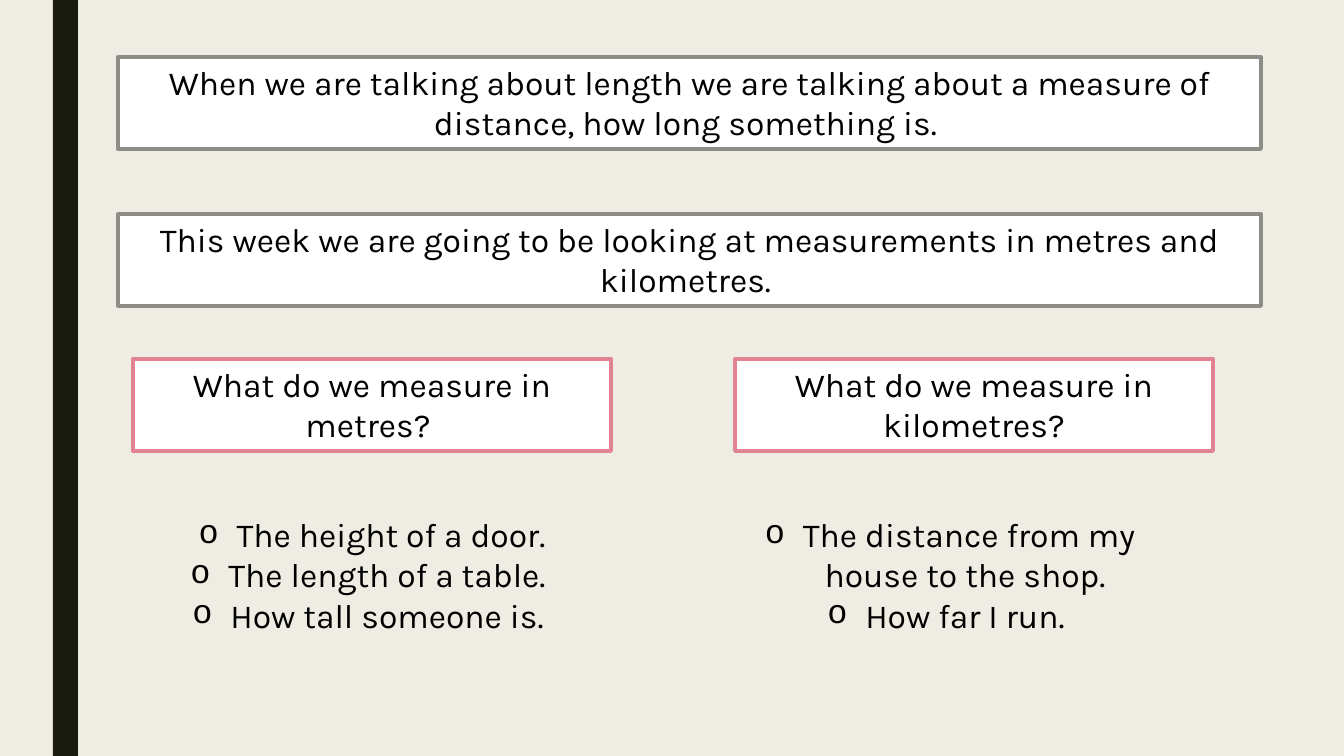
"""Build the slide on measuring length in metres and kilometres."""
from pptx import Presentation
from pptx.dml.color import RGBColor
from pptx.enum.shapes import MSO_SHAPE
from pptx.enum.text import MSO_ANCHOR, MSO_AUTO_SIZE, PP_ALIGN
from pptx.oxml.ns import qn
from pptx.util import Pt
from lxml.etree import SubElement
from dataclasses import dataclass


@dataclass(frozen=True)
class Theme:
    background: str = "EFEDE3"
    stripe: str = "191B0E"
    panel: str = "FFFFFF"
    statement: str = "8C8D86"
    question: str = "E28394"
    text: str = "000000"
    font: str = "Karla"
    bullet_font: str = "Courier New"
    size: float = 24
    border: float = 2.75


def px(length):
    return round(length * 914400 / 100.8)


def write(shape, lines, bulleted=False):
    frame = shape.text_frame
    frame.word_wrap = True
    frame.auto_size = MSO_AUTO_SIZE.SHAPE_TO_FIT_TEXT
    frame.vertical_anchor = MSO_ANCHOR.TOP
    frame.text = "\n".join(lines)
    for paragraph in frame.paragraphs:
        paragraph.alignment = PP_ALIGN.CENTER
        paragraph.font.name = theme.font
        paragraph.font.size = Pt(theme.size)
        paragraph.font.color.rgb = RGBColor.from_string(theme.text)
        if bulleted:
            properties = paragraph._p.get_or_add_pPr()
            properties.set("marL", str(px(38)))
            properties.set("indent", str(-px(38)))
            bullet_font = properties.makeelement(qn("a:buFont"), {"typeface": theme.bullet_font})
            properties.insert(0, bullet_font)
            bullet = properties.makeelement(qn("a:buChar"), {"char": "o"})
            bullet_font.addnext(bullet)


theme = Theme()
presentation = Presentation()
presentation.slide_width = px(1344)
presentation.slide_height = px(756)
slide = presentation.slides.add_slide(presentation.slide_layouts[6])
slide.background.fill.solid()
slide.background.fill.fore_color.rgb = RGBColor.from_string(theme.background)

stripe = slide.shapes.add_shape(MSO_SHAPE.RECTANGLE, px(53), 0, px(25), px(756))
stripe.shadow.inherit = False
stripe.fill.solid()
stripe.fill.fore_color.rgb = RGBColor.from_string(theme.stripe)
stripe.line.fill.background()

panels = [
    (118, 57, 1143, theme.statement,
     "When we are talking about length we are talking about a measure of distance, how long something is. "),
    (118, 214, 1143, theme.statement,
     "This week we are going to be looking at measurements in metres and kilometres. "),
    (133, 359, 478, theme.question, "What do we measure in metres? "),
    (735, 359, 478, theme.question, "What do we measure in kilometres?"),
]
for left, top, width, border, text in panels:
    panel = slide.shapes.add_shape(MSO_SHAPE.RECTANGLE, px(left), px(top), px(width), px(92))
    panel.shadow.inherit = False
    panel.fill.solid()
    panel.fill.fore_color.rgb = RGBColor.from_string(theme.panel)
    panel.line.color.rgb = RGBColor.from_string(border)
    panel.line.width = Pt(theme.border)
    write(panel, [text])

answers = [
    (133, ["The height of a door.", "The length of a table. ", "How tall someone is. "]),
    (711, ["The distance from my house to the shop. ", "How far I run. "]),
]
for left, lines in answers:
    answer = slide.shapes.add_textbox(px(left), px(509), px(478), px(132))
    write(answer, lines, bulleted=True)

presentation.save("out.pptx")
